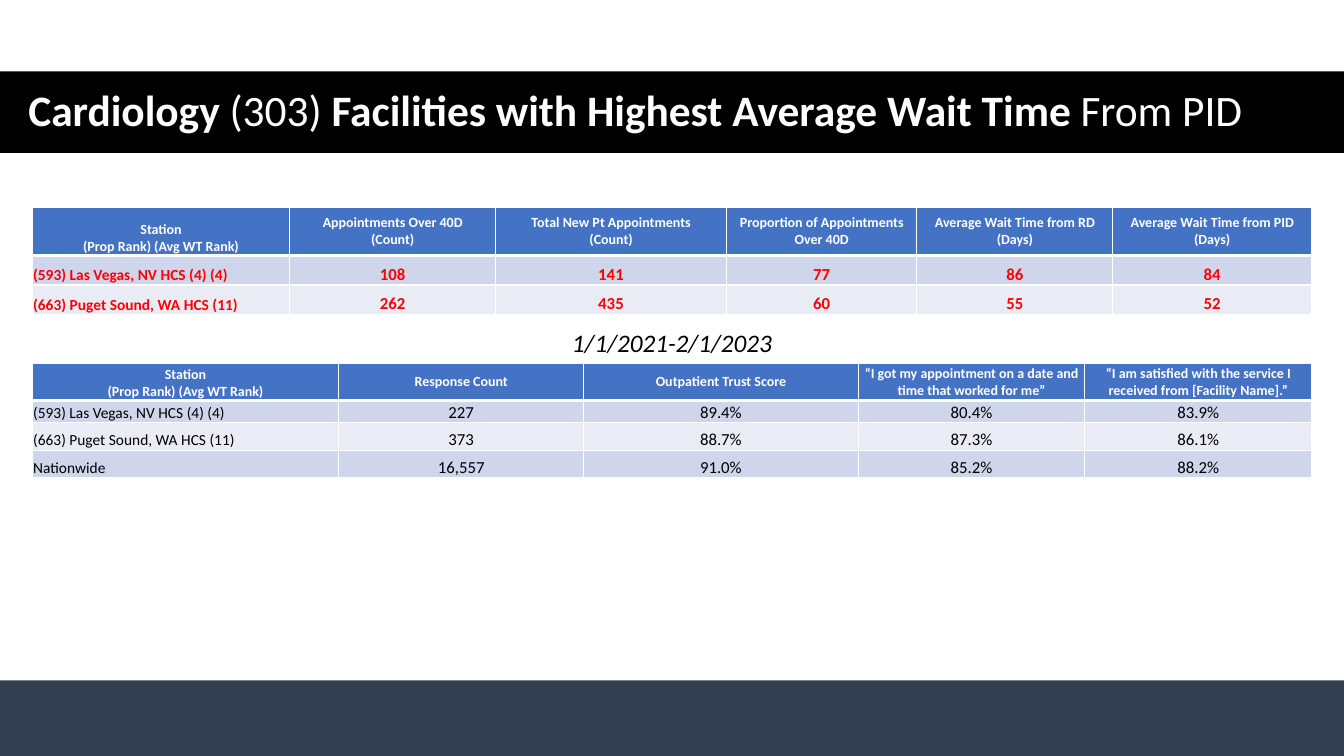
from lxml.etree import SubElement
from pptx import Presentation
from pptx.dml.color import RGBColor
from pptx.enum.shapes import MSO_SHAPE
from pptx.enum.text import MSO_ANCHOR, MSO_AUTO_SIZE, PP_ALIGN
from pptx.oxml.ns import qn
from pptx.util import Pt

RECTANGLE = MSO_SHAPE.RECTANGLE
MIDDLE, BOTTOM = MSO_ANCHOR.MIDDLE, MSO_ANCHOR.BOTTOM
LEFT, CENTER = PP_ALIGN.LEFT, PP_ALIGN.CENTER
FIXED = MSO_AUTO_SIZE.NONE

COLORS = {
    "white": "FFFFFF", "black": "000000", "slate": "333F50", "red": "FF0000",
    "header": "4472C4", "odd": "CFD5EA", "even": "E9EBF5",
}
TITLE_SPANS = [
    ("Cardiology", True), (" (303) ", False),
    ("Facilities with Highest Average Wait Time ", True), ("From PID", False),
]
STATION = "Station\n(Prop Rank) (Avg WT Rank)"
LAS_VEGAS = "(593) Las Vegas, NV HCS (4) (4)"
PUGET_SOUND = "(663) Puget Sound, WA HCS (11)"
WAIT_TIMES = [
    [STATION, "Appointments Over 40D\n(Count)", "Total New Pt Appointments\n(Count)",
     "Proportion of Appointments Over 40D", "Average Wait Time from RD\n(Days)",
     "Average Wait Time from PID\n(Days)"],
    [LAS_VEGAS, "108", "141", "77", "86", "84"],
    [PUGET_SOUND, "262", "435", "60", "55", "52"],
]
SURVEY = [
    [STATION, "Response Count", "Outpatient Trust Score",
     "“I got my appointment on a date and time that worked for me”",
     "“I am satisfied with the service I received from [Facility Name].”"],
    [LAS_VEGAS, "227", "89.4%", "80.4%", "83.9%"],
    [PUGET_SOUND, "373", "88.7%", "87.3%", "86.1%"],
    ["Nationwide", "16,557", "91.0%", "85.2%", "88.2%"],
]


class SlideBuilder:
    def __init__(self, page, font_name):
        self.page = page
        self.font_name = font_name

    def color(self, name):
        return RGBColor.from_string(COLORS[name])

    def style(self, span, size, color, bold=False, italic=False):
        font = span.font
        font.name, font.size, font.bold, font.italic = self.font_name, Pt(size), bold, italic
        font.color.rgb = self.color(color)

    def place(self, shape, left, top, width, height):
        shape.left, shape.top = Pt(left), Pt(top)
        shape.width, shape.height = Pt(width), Pt(height)

    def band(self, top, height, color):
        shape = self.page.shapes.add_shape(RECTANGLE, 0, Pt(top), Pt(960), Pt(height))
        shape.shadow.inherit = False
        shape.fill.solid()
        shape.fill.fore_color.rgb = self.color(color)
        shape.line.fill.background()

    def title(self, spans, left, top, width, height):
        title = self.page.shapes.title
        self.place(title, left, top, width, height)
        title.element.getparent().append(title.element)  # bring in front of the band
        frame = title.text_frame
        frame.auto_size, frame.word_wrap = FIXED, True
        frame.vertical_anchor = MIDDLE
        para = frame.paragraphs[0]
        para.alignment, para.line_spacing = LEFT, 0.9
        for text, bold in spans:
            span = para.add_run()
            span.text = text
            self.style(span, 31, "white", bold)

    def caption(self, text, left, top, width, height):
        box = self.page.shapes.add_textbox(Pt(left), Pt(top), Pt(width), Pt(height))
        box.text_frame.word_wrap = True
        box.text_frame.text = text
        para = box.text_frame.paragraphs[0]
        para.alignment = CENTER
        self.style(para.runs[0], 18, "black", italic=True)

    def borders(self, cell, row):
        properties = cell._tc.get_or_add_tcPr()
        widths = {"L": 1, "R": 1, "T": 3 if row == 1 else 1, "B": 3 if row == 0 else 1}
        for side, width in widths.items():
            line = SubElement(properties, qn(f"a:ln{side}"), w=str(Pt(width)))
            fill = SubElement(line, qn("a:solidFill"))
            SubElement(fill, qn("a:srgbClr"), val=COLORS["white"])

    def cell(self, cell, text, row, column, color, bold):
        header, first = row == 0, column == 0
        self.borders(cell, row)
        cell.fill.solid()
        cell.fill.fore_color.rgb = self.color("header" if header else "odd" if row % 2 else "even")
        inset = Pt(0 if header and not first else 0.7)
        cell.margin_left = cell.margin_right = cell.margin_top = inset
        cell.margin_bottom = 0
        cell.vertical_anchor = MIDDLE if header and not first else BOTTOM
        size = 10 if header else 11 if first else 12
        para = cell.text_frame.paragraphs[0]
        para.text = text
        para.alignment = LEFT if first and not header else CENTER
        for line_break in para._p.findall(qn("a:br")):
            SubElement(line_break, qn("a:rPr"), sz=str(size * 100))
        for span in para.runs:
            self.style(span, size, "white" if header else color, header or bold)

    def table(self, data, left, top, widths, heights, color, bold=False):
        table = self.page.shapes.add_table(
            len(heights), len(widths), Pt(left), Pt(top), Pt(sum(widths)), Pt(sum(heights))
        ).table
        for column, width in zip(table.columns, widths):
            column.width = Pt(width)
        for row, height in zip(table.rows, heights):
            row.height = Pt(height)
        for row, texts in enumerate(data):
            for column, text in enumerate(texts):
                self.cell(table.cell(row, column), text, row, column, color, bold)


def main():
    deck = Presentation()
    deck.slide_width, deck.slide_height = Pt(960), Pt(540)
    builder = SlideBuilder(deck.slides.add_slide(deck.slide_layouts[5]), "Calibri")

    # Footer and title bands
    builder.band(486, 54, "slate")
    builder.band(51, 58.3, "black")
    builder.title(TITLE_SPANS, 13, 41.8, 920, 77)

    # Wait times, then survey results with their period
    builder.table(WAIT_TIMES, 23, 148, [184, 147, 165, 136, 140, 142],
                  [34.6, 21, 21], "red", bold=True)
    builder.table(SURVEY, 23, 259.4, [219, 175, 196, 162, 162],
                  [26.6, 16, 19.6, 19.6], "black")
    builder.caption("1/1/2021-2/1/2023", 240, 230.4, 480, 29)

    deck.save("out.pptx")


if __name__ == "__main__":
    main()
